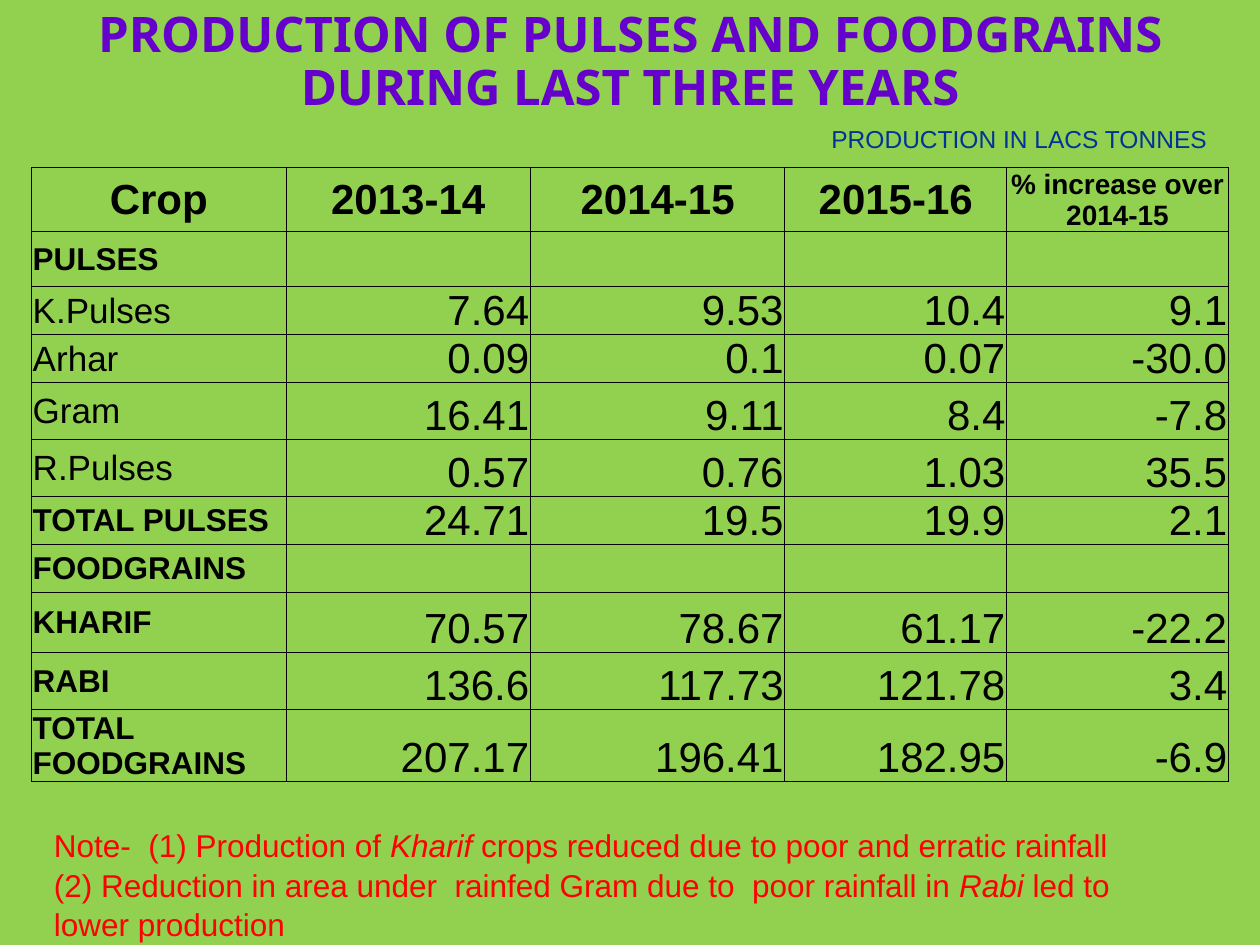
from pptx import Presentation
from pptx.dml.color import RGBColor
from pptx.enum.text import MSO_ANCHOR as ANCHOR, PP_ALIGN as ALIGN
from pptx.oxml import parse_xml
from pptx.oxml.ns import nsdecls
from pptx.util import Inches, Pt

COLORS = {"background": "92D050", "title": "6600CC", "unit": "003399",
          "note": "FF0000", "text": "000000", "border": "000000"}

HEADER = ["Crop", "2013-14", "2014-15", "2015-16", "% increase over 2014-15"]
# Crop, yearly production and change, row height
CROPS = [
    (["PULSES"], 0.44),
    (["K.Pulses", "7.64", "9.53", "10.4", "9.1"], 0.38),
    (["Arhar", "0.09", "0.1", "0.07", "-30.0"], 0.38),
    (["Gram", "16.41", "9.11", "8.4", "-7.8"], 0.45),
    (["R.Pulses", "0.57", "0.76", "1.03", "35.5"], 0.45),
    (["TOTAL PULSES", "24.71", "19.5", "19.9", "2.1"], 0.38),
    (["FOODGRAINS"], 0.38),
    (["KHARIF", "70.57", "78.67", "61.17", "-22.2"], 0.48),
    (["RABI", "136.6", "117.73", "121.78", "3.4"], 0.45),
    (["TOTAL FOODGRAINS", "207.17", "196.41", "182.95", "-6.9"], 0.57),
]
COL_WIDTHS = [2.02, 1.94, 2.02, 1.76, 1.76]
NOTES = [
    [("Note-  (1) Production of ", False), ("Kharif ", True),
     ("crops reduced due to poor and erratic rainfall", False)],
    [("(2) Reduction in area under  rainfed Gram due to  poor rainfall in ", False),
     ("Rabi ", True), ("led to lower production", False)],
]


def add_run(p, text, size=18, color="text", font="Arial", bold=False, italic=False):
    r = p.add_run()
    r.text = text
    r.font.size, r.font.name = Pt(size), font
    r.font.bold, r.font.italic = bold, italic
    r.font.color.rgb = RGBColor.from_string(COLORS[color])
    return r


class SlideBuilder:
    def __init__(self, prs):
        self.s = prs.slides.add_slide(prs.slide_layouts[5])
        fill = self.s.background.fill
        fill.solid()
        fill.fore_color.rgb = RGBColor.from_string(COLORS["background"])

    def title(self, text, x, y, w, h):
        sp = self.s.shapes.title
        sp.left, sp.top, sp.width, sp.height = map(Inches, (x, y, w, h))
        tf = sp.text_frame
        tf.word_wrap, tf.vertical_anchor = True, ANCHOR.MIDDLE
        p = tf.paragraphs[0]
        p.alignment, p.line_spacing = ALIGN.CENTER, 0.9
        add_run(p, text, size=28, color="title", font="Noto Sans", bold=True)

    def text(self, paragraphs, x, y, w, h, **fmt):
        tf = self.s.shapes.add_textbox(*map(Inches, (x, y, w, h))).text_frame
        tf.word_wrap = True
        for i, runs in enumerate(paragraphs):
            p = tf.add_paragraph() if i else tf.paragraphs[0]
            p.line_spacing = 1.05
            for text, italic in runs:
                add_run(p, text, italic=italic, **fmt)

    def cell(self, cell, text, align=ALIGN.LEFT, anchor=ANCHOR.MIDDLE, **fmt):
        cell.margin_left = cell.margin_top = cell.margin_right = Inches(0.01)
        cell.margin_bottom = 0
        cell.vertical_anchor = anchor
        p = cell.text_frame.paragraphs[0]
        p.alignment = align
        if text:
            add_run(p, text, **fmt)
        else:
            p.font.size = Pt(18)
        tc_pr = cell._tc.get_or_add_tcPr()
        for side in ("lnL", "lnR", "lnT", "lnB"):
            tc_pr.append(parse_xml(
                f'<a:{side} {nsdecls("a")} w="{Pt(0.5)}"><a:solidFill>'
                f'<a:srgbClr val="{COLORS["border"]}"/></a:solidFill></a:{side}>'))
        cell.fill.background()

    def table(self, x, y, header_height=0.5):
        heights = [header_height] + [h for _, h in CROPS]
        tbl = self.s.shapes.add_table(
            len(heights), len(COL_WIDTHS), Inches(x), Inches(y),
            Inches(sum(COL_WIDTHS)), Inches(sum(heights))).table
        tbl.first_row = tbl.horz_banding = False
        for col, w in zip(tbl.columns, COL_WIDTHS):
            col.width = Inches(w)
        for row, h in zip(tbl.rows, heights):
            row.height = Inches(h)
        # Header: the long last heading is smaller
        for j, text in enumerate(HEADER):
            self.cell(tbl.cell(0, j), text, align=ALIGN.CENTER, bold=True,
                      size=24 if j < len(HEADER) - 1 else 16)
        # Body: group and total names are bold capitals
        for i, (values, _) in enumerate(CROPS, 1):
            name = values[0]
            group = name.isupper()
            self.cell(tbl.cell(i, 0), name, size=18 if group else 20, bold=group)
            for j in range(1, len(HEADER)):
                value = values[j] if j < len(values) else ""
                self.cell(tbl.cell(i, j), value, align=ALIGN.RIGHT,
                          anchor=ANCHOR.BOTTOM, size=24)


def main():
    prs = Presentation()
    prs.slide_width, prs.slide_height = Inches(10), Inches(7.5)
    b = SlideBuilder(prs)
    b.title("PRODUCTION OF PULSES AND FOODGRAINS DURING LAST THREE YEARS",
            0, 0, 10, 1)
    b.table(0.25, 1.33)
    # Unit of measure and footnotes
    b.text([[("PRODUCTION IN LACS TONNES", False)]], 6.5, 0.92, 3.5, 0.34,
           size=14, color="unit")
    b.text(NOTES, 0.33, 6.49, 9.17, 1.01, color="note")
    prs.save("out.pptx")


if __name__ == "__main__":
    main()
